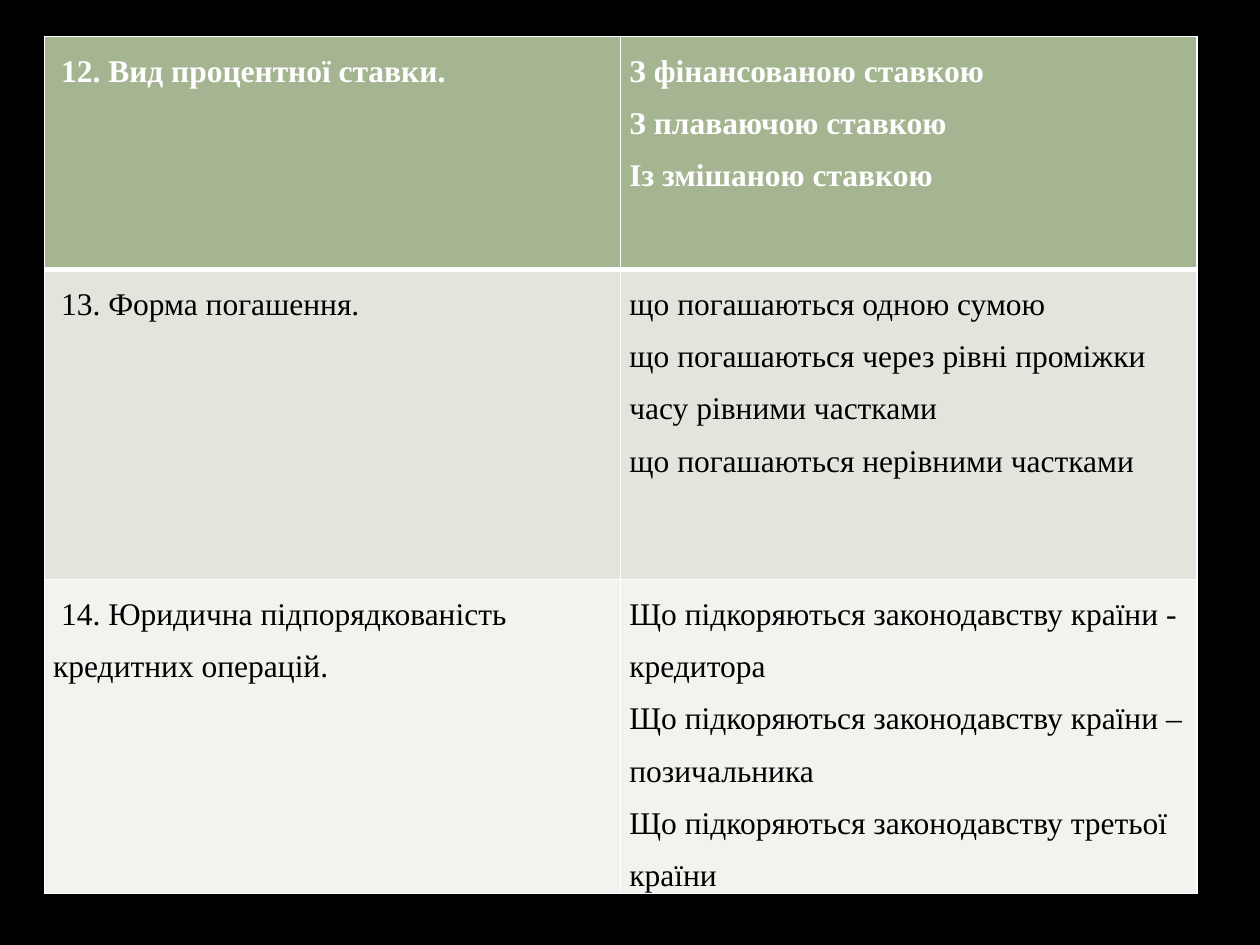
"""Build a slide with a table of loan types by interest rate, repayment and law."""
from lxml import etree
from pptx import Presentation, util as u
from pptx.dml.color import RGBColor
from pptx.oxml import ns

CRITERIA = [
    ("12. Вид процентної ставки.",
     ["З фінансованою ставкою", "З плаваючою ставкою", "Із змішаною ставкою"]),
    ("13. Форма погашення.",
     ["що погашаються одною сумою",
      "що погашаються через рівні проміжки часу рівними частками",
      "що погашаються нерівними частками"]),
    ("14. Юридична підпорядкованість кредитних операцій.",
     ["Що підкоряються законодавству країни - кредитора",
      "Що підкоряються законодавству країни – позичальника",
      "Що підкоряються законодавству третьої країни"]),
]
COLORS = {"background": "000000", "border": "FFFFFF", "header": "A5B592",
          "header_text": "FFFFFF", "odd": "E1E5DC", "even": "F0F3EE", "text": "000000"}
ROW_STYLES = [("header", "header_text", True), ("odd", "text", False), ("even", "text", False)]
ROW_HEIGHTS = [133.2, 177.2, 177.2]
COLUMN_WIDTH = 329.3
LEFT, TOP = 25.4, 20.9
THIN, THICK = 1, 3
NUMBER_INDENT = 4.5
CELL_FORMAT = {"margin_left": u.Pt(5), "margin_right": u.Pt(5),
               "margin_top": u.Pt(0), "margin_bottom": u.Pt(0)}
FONT_FORMAT = {"name": "Times New Roman", "size": u.Pt(18)}


def rgb(key):
    return RGBColor.from_string(COLORS[key])


def apply(target, values):
    for name, value in values.items():
        setattr(target, name, value)


def draw_borders(cell, widths):
    properties = cell._tc.get_or_add_tcPr()
    for side, width in widths.items():
        line = etree.SubElement(properties, ns.qn(f"a:ln{side}"), w=str(u.Pt(width)))
        fill = etree.SubElement(line, ns.qn("a:solidFill"))
        etree.SubElement(fill, ns.qn("a:srgbClr"), val=COLORS["border"])


def write_paragraphs(cell, lines, color, bold, indent):
    frame = cell.text_frame
    for i, line in enumerate(lines):
        paragraph = frame.add_paragraph() if i else frame.paragraphs[0]
        paragraph._p.get_or_add_pPr().set("indent", str(u.Pt(indent)))
        paragraph.line_spacing = 1.5
        run = paragraph.add_run()
        run.text = line
        apply(run.font, {**FONT_FORMAT, "bold": bold})
        run.font.color.rgb = rgb(color)


def main():
    deck = Presentation()
    apply(deck, {"slide_width": u.Pt(720), "slide_height": u.Pt(540)})
    slide = deck.slides.add_slide(deck.slide_layouts[6])
    background = slide.background.fill
    background.solid()
    background.fore_color.rgb = rgb("background")

    criteria = slide.shapes.add_table(
        len(CRITERIA), 2, u.Pt(LEFT), u.Pt(TOP),
        u.Pt(2 * COLUMN_WIDTH), u.Pt(sum(ROW_HEIGHTS))).table
    for column in criteria.columns:
        column.width = u.Pt(COLUMN_WIDTH)

    for r, (criterion, kinds) in enumerate(CRITERIA):
        criteria.rows[r].height = u.Pt(ROW_HEIGHTS[r])
        fill, color, bold = ROW_STYLES[r]
        borders = {"L": THIN, "R": THIN, "T": THICK if r == 1 else THIN,
                   "B": THICK if r == 0 else THIN}
        for c, (lines, indent) in enumerate([([criterion], NUMBER_INDENT), (kinds, 0)]):
            cell = criteria.cell(r, c)
            apply(cell, CELL_FORMAT)
            draw_borders(cell, borders)
            cell.fill.solid()
            cell.fill.fore_color.rgb = rgb(fill)
            write_paragraphs(cell, lines, color, bold, indent)

    deck.save("out.pptx")


if __name__ == "__main__":
    main()
